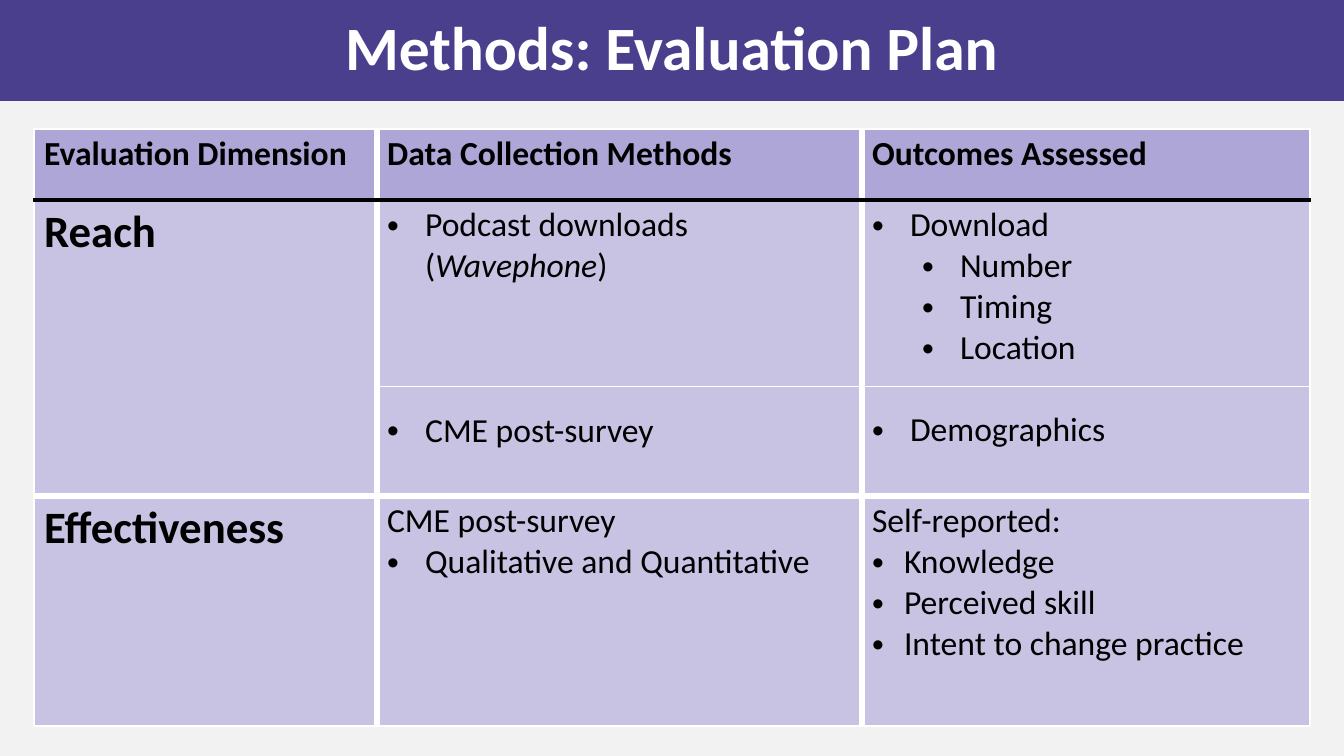
from dataclasses import dataclass

from lxml import etree
from pptx import Presentation
from pptx.dml.color import RGBColor
from pptx.enum.shapes import MSO_CONNECTOR, MSO_SHAPE
from pptx.enum.text import MSO_ANCHOR, PP_ALIGN
from pptx.oxml.ns import qn
from pptx.util import Pt

RECTANGLE = MSO_SHAPE.RECTANGLE
STRAIGHT = MSO_CONNECTOR.STRAIGHT
MIDDLE = MSO_ANCHOR.MIDDLE
CENTER = PP_ALIGN.CENTER

EMU_PER_PX = 914400 / 100.8
FONT = "Calibri"
BODY_SIZE = 24
LABEL_SIZE = 32
BODY_LINE = 29.3  # height of one body line in points

BLACK = RGBColor(0x00, 0x00, 0x00)
WHITE = RGBColor(0xFF, 0xFF, 0xFF)
PAGE_GRAY = RGBColor(0xF2, 0xF2, 0xF2)
BANNER_PURPLE = RGBColor(0x4A, 0x3F, 0x8D)
HEADER_LILAC = RGBColor(0xAE, 0xA6, 0xD6)
BODY_LILAC = RGBColor(0xC8, 0xC3, 0xE3)

TABLE_LEFT, TABLE_TOP = 34, 129
COLUMN_WIDTHS = (343, 485, 448)
ROW_HEIGHTS = (71, 296, 230)
OUTER_RULE, INNER_RULE, HEADER_RULE = 1, 4.5, 3


@dataclass(frozen=True)
class Span:
    text: str
    italic: bool = False


@dataclass(frozen=True)
class Line:
    spans: tuple[Span, ...]
    size: int = BODY_SIZE
    bold: bool = False
    indent: int = 0  # text offset in px, 0 for no bullet
    hang: int = 0
    level: int = 0
    lines_before: int = 0


def heading(text: str, size: int = BODY_SIZE) -> tuple[Line, ...]:
    return (Line((Span(text),), size=size, bold=True),)


def plain(text: str) -> Line:
    return Line((Span(text),))


def bullet(*spans: Span, hang: int = 38, level: int = 0, lines_before: int = 0) -> Line:
    return Line(spans, indent=hang + 50 * level, hang=hang, level=level,
                lines_before=lines_before)


ROWS = (
    (heading("Evaluation Dimension"),
     heading("Data Collection Methods"),
     heading("Outcomes Assessed")),
    (heading("Reach", LABEL_SIZE),
     (bullet(Span("Podcast downloads ("), Span("Wavephone", italic=True), Span(")")),
      bullet(Span("CME post-survey"), lines_before=3)),
     (bullet(Span("Download")),
      *(bullet(Span(detail), level=1) for detail in ("Number", "Timing", "Location")),
      bullet(Span("Demographics"), lines_before=1))),
    (heading("Effectiveness", LABEL_SIZE),
     (plain("CME post-survey"), bullet(Span("Qualitative and Quantitative"))),
     (plain("Self-reported:"),
      *(bullet(Span(outcome), hang=32)
        for outcome in ("Knowledge", "Perceived skill", "Intent to change practice")))),
)


def px(length: int) -> int:
    return round(length * EMU_PER_PX)


def add_text(para, text: str, *, size: float, color: RGBColor = BLACK,
             bold: bool = False, italic: bool = False) -> None:
    span = para.add_run()
    span.text = text
    span.font.name = FONT
    span.font.size = Pt(size)
    span.font.bold = bold
    span.font.italic = italic
    span.font.color.rgb = color


def set_bullet(para, line: Line) -> None:
    para.level = line.level
    properties = para._p.get_or_add_pPr()
    properties.set("marL", str(px(line.indent)))
    properties.set("indent", str(-px(line.hang)))
    etree.SubElement(properties, qn("a:buFont")).set("typeface", "Arial")
    etree.SubElement(properties, qn("a:buChar")).set("char", "•")


def write_lines(frame, lines: tuple[Line, ...]) -> None:
    for index, line in enumerate(lines):
        para = frame.add_paragraph() if index else frame.paragraphs[0]
        if line.lines_before:
            para.space_before = Pt(line.lines_before * BODY_LINE)
        if line.hang:
            set_bullet(para, line)
        for span in line.spans:
            add_text(para, span.text, size=line.size, bold=line.bold, italic=span.italic)


def set_borders(cell, row: int, column: int) -> None:
    def horizontal(edge: int) -> tuple[RGBColor, float]:
        if edge == 1:
            return BLACK, HEADER_RULE
        return WHITE, OUTER_RULE if edge in (0, len(ROW_HEIGHTS)) else INNER_RULE

    def vertical(edge: int) -> tuple[RGBColor, float]:
        return WHITE, OUTER_RULE if edge in (0, len(COLUMN_WIDTHS)) else INNER_RULE

    borders = (("a:lnL", vertical(column)), ("a:lnR", vertical(column + 1)),
               ("a:lnT", horizontal(row)), ("a:lnB", horizontal(row + 1)))
    properties = cell._tc.get_or_add_tcPr()
    for position, (tag, (color, width)) in enumerate(borders):
        border = etree.Element(qn(tag), w=str(Pt(width)))
        fill = etree.SubElement(border, qn("a:solidFill"))
        etree.SubElement(fill, qn("a:srgbClr")).set("val", str(color))
        properties.insert(position, border)


def add_banner(page, text: str) -> None:
    box = page.shapes.add_shape(RECTANGLE, 0, 0, px(1344), px(101))
    box.shadow.inherit = False
    box.fill.solid()
    box.fill.fore_color.rgb = BANNER_PURPLE
    box.line.fill.background()
    box.text_frame.word_wrap = True
    box.text_frame.vertical_anchor = MIDDLE
    para = box.text_frame.paragraphs[0]
    para.alignment = CENTER
    para.line_spacing = 0.9
    add_text(para, text, size=44, color=WHITE, bold=True)


def add_plan_table(page) -> None:
    table = page.shapes.add_table(
        len(ROW_HEIGHTS), len(COLUMN_WIDTHS), px(TABLE_LEFT), px(TABLE_TOP),
        px(sum(COLUMN_WIDTHS)), px(sum(ROW_HEIGHTS))).table
    table.horz_banding = False
    for column, width in enumerate(COLUMN_WIDTHS):
        table.columns[column].width = px(width)
    for row, height in enumerate(ROW_HEIGHTS):
        table.rows[row].height = px(height)
        for column, lines in enumerate(ROWS[row]):
            cell = table.cell(row, column)
            cell.fill.solid()
            cell.fill.fore_color.rgb = BODY_LILAC if row else HEADER_LILAC
            set_borders(cell, row, column)
            write_lines(cell.text_frame, lines)


def add_divider(page, left: int, right: int, y: int) -> None:
    divider = page.shapes.add_connector(STRAIGHT, px(left), px(y), px(right), px(y))
    divider.line.color.rgb = WHITE
    divider.line.width = Pt(0.5)
    etree.SubElement(divider._element.spPr, qn("a:effectLst"))


def main() -> None:
    deck = Presentation()
    deck.slide_width, deck.slide_height = px(1344), px(756)
    page = deck.slides.add_slide(deck.slide_layouts[6])
    page.background.fill.solid()
    page.background.fill.fore_color.rgb = PAGE_GRAY

    add_banner(page, "Methods: Evaluation Plan")
    add_plan_table(page)
    # Splits the Reach row between downloads and survey
    add_divider(page, 375, 1309, 386)

    deck.save("out.pptx")


if __name__ == "__main__":
    main()
